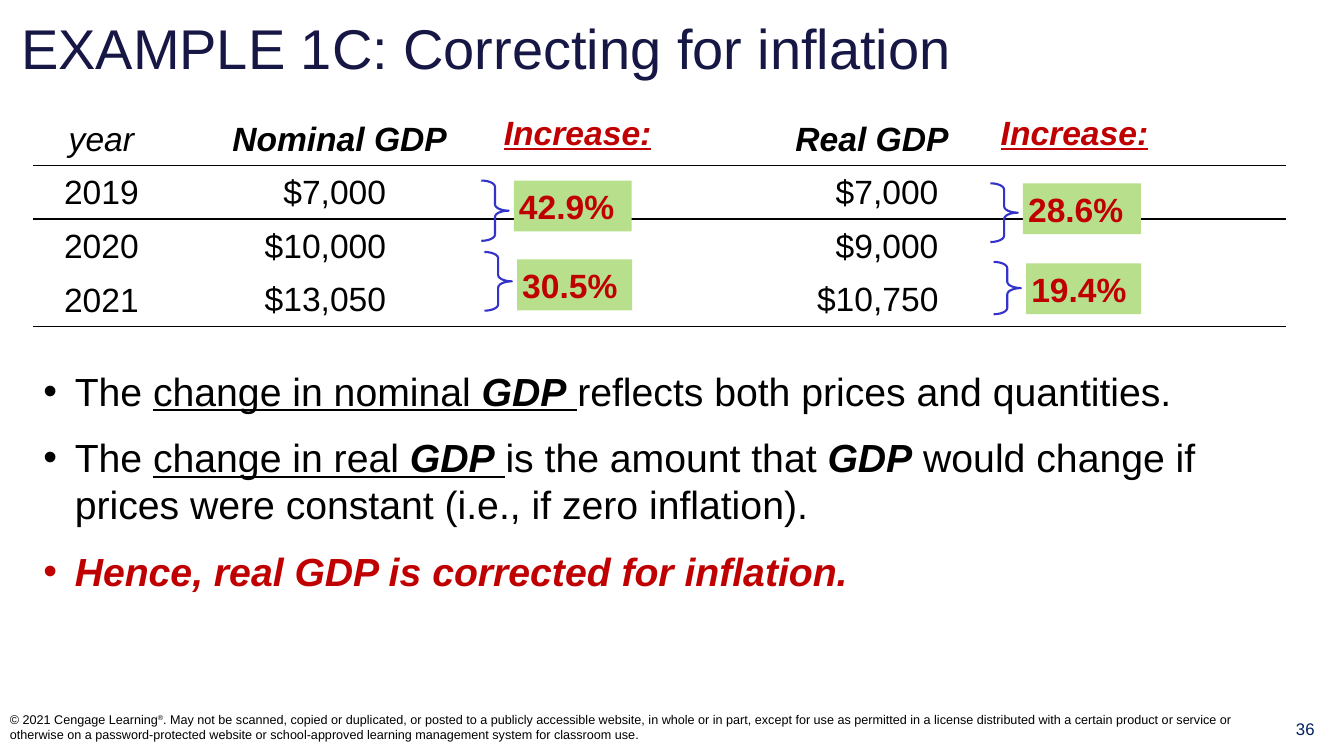
from lxml import etree
from pptx import Presentation
from pptx import util as u
from pptx.dml.color import RGBColor
from pptx.enum import shapes, text
from pptx.oxml import ns

# Content
TITLE = "EXAMPLE 1C: Correcting for inflation"
HEADINGS = ["year", "Nominal GDP", "", "Real GDP", ""]
GDP_ROWS = [
    ["2019", "$7,000", "", "$7,000", ""],
    ["2020", "$10,000", "", "$9,000", ""],
    ["2021", "$13,050", "", "$10,750", ""],
]
# Percentage, then label (left, top, width) and brace (top, height) in cm
INCREASES = [
    ("42.9%", (12.95, 4.55, 2.97), (4.55, 1.52)),
    ("30.5%", (13.03, 6.54, 2.9), (6.35, 1.48)),
    ("28.6%", (25.78, 4.62, 2.97), (4.62, 1.48)),
    ("19.4%", (25.86, 6.64, 2.9), (6.6, 1.32)),
]
INCREASE_HEADING = "Increase:"
INCREASE_HEADING_LEFTS = [12.45, 24.97]
# Each run is a text and its style letters: b bold, i italic, u underline
POINTS = [
    [("The ", ""), ("change in nominal ", "u"), ("GDP", "biu"), (" ", "u"),
     ("reflects both prices and quantities.", "")],
    [("The ", ""), ("change in real ", "u"), ("GDP", "biu"), (" ", "u"),
     ("is the amount that ", ""), ("GDP", "bi"),
     (" would change if prices were constant (i.e., if zero inflation).", "")],
    [("Hence, real GDP is corrected for inflation.", "bi")],
]
COPYRIGHT = [
    ("© 2021 Cengage Learning", 0),
    ("®", 30),
    (". May not be scanned, copied or duplicated, or posted to a publicly "
     "accessible website, in whole or in part, except for use as permitted in a "
     "license distributed with a certain product or service or otherwise on a "
     "password-protected website or school-approved learning management system "
     "for classroom use.", 0),
]
PAGE_NUMBER = "36"

# Look
BLACK = RGBColor(0x00, 0x00, 0x00)
NAVY = RGBColor(0x17, 0x17, 0x45)
PAGE_BLUE = RGBColor(0x00, 0x20, 0x60)
RED = RGBColor(0xC0, 0x00, 0x00)
GREEN = RGBColor(0xB8, 0xE0, 0x8C)
BRACE_BLUE = RGBColor(0x33, 0x33, 0xCC)
COLUMN_WIDTHS = [3.43, 8.33, 5.92, 6.91, 6.98]
ROW_HEIGHT = 1.35
AMOUNT_RIGHT_MARGINS = {1: 2.87, 3: 1.78}
NO_GRID_STYLE = "{2D5ABB26-0587-4C30-8999-92F81FD0307C}"


def write(paragraph, wording, size=24, color=BLACK, style="", raised=0):
    run = paragraph.add_run()
    run.text = wording
    font = run.font
    font.name, font.size, font.color.rgb = "Arial", u.Pt(size), color
    font.bold, font.italic, font.underline = (key in style for key in "biu")
    if raised:
        font._element.set("baseline", str(raised * 1000))


def box(left, top, width, height):
    return [u.Cm(length) for length in (left, top, width, height)]


def place(placeholder, *lengths):
    (placeholder.left, placeholder.top,
     placeholder.width, placeholder.height) = box(*lengths)
    placeholder.text_frame.auto_size = text.MSO_AUTO_SIZE.NONE
    return placeholder.text_frame


def add_label(*lengths):
    frame = slide.shapes.add_textbox(*box(*lengths)).text_frame
    frame.word_wrap = True
    return frame


def rule_cell(cell, side):
    border = etree.SubElement(cell._tc.get_or_add_tcPr(), ns.qn(f"a:{side}"), w="12700")
    fill = etree.SubElement(border, ns.qn("a:solidFill"))
    etree.SubElement(fill, ns.qn("a:srgbClr"), val=str(BLACK))


deck = Presentation()
deck.slide_width, deck.slide_height = u.Cm(33.87), u.Cm(19.05)
slide = deck.slides.add_slide(deck.slide_layouts[1])

# Title
title = place(slide.shapes.title, 0.28, 0.28, 33.02, 1.83)
title.word_wrap = False
title.vertical_anchor = text.MSO_ANCHOR.MIDDLE
title.paragraphs[0].alignment = text.PP_ALIGN.LEFT
write(title.paragraphs[0], TITLE, size=40, color=NAVY)

# Page number and copyright line
page = add_label(31.93, 17.98, 1.93, 1.04)
page.paragraphs[0].alignment = text.PP_ALIGN.CENTER
write(page.paragraphs[0], PAGE_NUMBER, size=12, color=PAGE_BLUE)
copyright_line = add_label(0, 17.58, 32.46, 1.47)
copyright_line.vertical_anchor = text.MSO_ANCHOR.MIDDLE
for wording, raised in COPYRIGHT:
    write(copyright_line.paragraphs[0], wording, size=9, raised=raised)

# Bullet points
body = place(slide.placeholders[1], 0.84, 9.12, 31.6, 8.26)
for number, runs in enumerate(POINTS):
    point = body.add_paragraph() if number else body.paragraphs[0]
    properties = point._p.get_or_add_pPr()
    properties.set("marL", str(u.Cm(0.79)))
    properties.set("indent", str(-u.Cm(0.79)))
    point.space_before = u.Pt(14 if number else 0)
    color = RED if number == len(POINTS) - 1 else BLACK
    for wording, style in runs:
        write(point, wording, size=28, color=color, style=style)

# GDP table
rows = [HEADINGS] + GDP_ROWS
table = slide.shapes.add_table(
    len(rows), len(HEADINGS),
    *box(0.84, 2.82, sum(COLUMN_WIDTHS), ROW_HEIGHT * len(rows))).table
table.first_row = table.horz_banding = False
table._tbl.tblPr.find(ns.qn("a:tableStyleId")).text = NO_GRID_STYLE
for column, width in zip(table.columns, COLUMN_WIDTHS):
    column.width = u.Cm(width)
for r, row in enumerate(rows):
    table.rows[r].height = u.Cm(ROW_HEIGHT)
    for c, wording in enumerate(row):
        cell = table.cell(r, c)
        if r == 1:
            rule_cell(cell, "lnT")
        if r in (0, len(rows) - 1):
            rule_cell(cell, "lnB")
        cell.fill.background()
        cell.vertical_anchor = text.MSO_ANCHOR.MIDDLE
        if not wording:
            continue
        entry = cell.text_frame.paragraphs[0]
        if r and c:
            entry.alignment = text.PP_ALIGN.RIGHT
            cell.margin_right = u.Cm(AMOUNT_RIGHT_MARGINS[c])
            cell.margin_top, cell.margin_bottom = u.Cm(0.03), 0
        else:
            entry.alignment = text.PP_ALIGN.CENTER
            entry.line_spacing = 1.05
            if c == 1:
                cell.margin_left = u.Cm(0.5)
        heading_style = "bi" if c else "i"
        write(entry, wording, style="" if r else heading_style)

# Increases with their braces
for left in INCREASE_HEADING_LEFTS:
    heading = add_label(left, 2.69, 5.08, 1.35)
    write(heading.paragraphs[0], INCREASE_HEADING, color=RED, style="biu")

for wording, (left, top, width), (brace_top, brace_height) in INCREASES:
    label = slide.shapes.add_shape(
        shapes.MSO_SHAPE.RECTANGLE, *box(left, top, width, 1.28))
    label.shadow.inherit = False
    label.fill.solid()
    label.fill.fore_color.rgb = GREEN
    label.line.fill.background()
    frame = label.text_frame
    frame.word_wrap = True
    frame.vertical_anchor = text.MSO_ANCHOR.TOP
    frame.margin_left = frame.margin_right = u.Cm(0.13)
    frame.margin_top = frame.margin_bottom = u.Cm(0.13)
    frame.paragraphs[0].alignment = text.PP_ALIGN.LEFT
    write(frame.paragraphs[0], wording, color=RED, style="b")

    brace = slide.shapes.add_shape(
        shapes.MSO_SHAPE.RIGHT_BRACE, *box(left - 0.82, brace_top, 0.69, brace_height))
    brace.shadow.inherit = False
    brace.adjustments[0] = 0.23
    brace.fill.background()
    brace.line.color.rgb = BRACE_BLUE
    brace.line.width = u.Pt(1.5)

deck.save("out.pptx")
